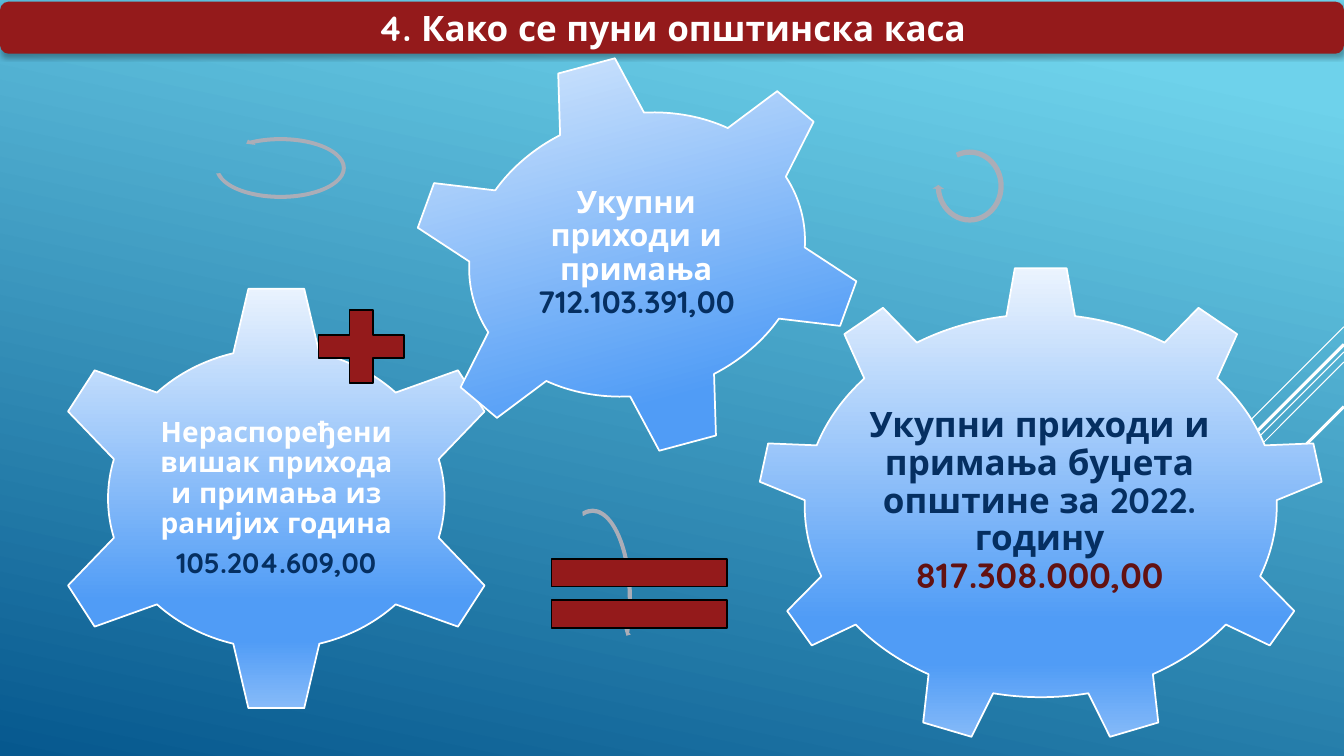
import pptx
import pptx.dml.color
import pptx.enum.shapes
import pptx.enum.text
import pptx.oxml
import pptx.oxml.ns
import pptx.util
import copy

KIND = pptx.enum.shapes.MSO_SHAPE
CELL = pptx.util.Inches(1 / 12)
COLS, ROWS = 160, 90  # square cells across the slide
WHITE, NAVY, RED, GREY = "FFFFFF", "052F61", "941A1B", "ABADB7"
SKY = [(10, "6ED2EB"), (100, "06588E")]
STEEL = [(0, "ECF4FE"), (74, "509CF6"), (83, "509CF6"), (100, "8BBDF9")]


def rgb(code):
    return pptx.dml.color.RGBColor.from_string(code)


def cells(*sizes):
    return [round(size * CELL) for size in sizes]


class Board:
    font = "Quicksand"

    def __init__(self, deck):
        self.slide = deck.slides.add_slide(deck.slide_layouts[6])
        self.shapes = self.slide.shapes

    def blend(self, fill, root, stops, angle):
        """Gradient whose angle runs clockwise."""
        fill.gradient()
        fill.gradient_angle = 360 - angle
        group = root.find(".//" + pptx.oxml.ns.qn("a:gsLst"))
        while len(group) < len(stops):
            group.append(copy.deepcopy(group[0]))
        for stop, (place, code) in zip(fill.gradient_stops, stops):
            stop.position = place / 100
            stop.color.rgb = rgb(code)

    def back(self, stops, angle):
        self.blend(self.slide.background.fill, self.slide.element, stops, angle)

    def ray(self, top, run):
        line = self.shapes.add_connector(
            pptx.enum.shapes.MSO_CONNECTOR.STRAIGHT,
            *cells(COLS, top, COLS - run, top + run))
        line.line.color.rgb = rgb(WHITE)
        line.element.spPr.append(pptx.oxml.parse_xml(
            "<a:effectLst %s/>" % pptx.oxml.ns.nsdecls("a")))
        return line.line

    def shape(self, kind, box, fill=None, edge=None, adj=()):
        item = self.shapes.add_shape(kind, *cells(*box))
        for i, value in enumerate(adj):
            item.adjustments[i] = value
        if fill:
            item.fill.solid()
            item.fill.fore_color.rgb = rgb(fill)
        if edge:
            item.line.color.rgb = rgb(edge)
            item.line.width = pptx.util.Pt(1.25)
        else:
            item.line.fill.background()
        item.shadow.inherit = False
        return item

    def words(self, frame, size, paras):
        """Each paragraph is a list of (text, colour) runs."""
        frame.word_wrap = True
        frame.vertical_anchor = pptx.enum.text.MSO_ANCHOR.MIDDLE
        for i, runs in enumerate(paras):
            para = frame.add_paragraph() if i else frame.paragraphs[0]
            para.alignment = pptx.enum.text.PP_ALIGN.CENTER
            for text, code in runs:
                run = para.add_run()
                run.text = text
                run.font.name = self.font
                run.font.size = pptx.util.Pt(size)
                run.font.bold = True
                run.font.color.rgb = rgb(code)

    def title(self, text, box):
        bar = self.shape(KIND.ROUNDED_RECTANGLE, box, RED)
        bar.element.spPr.find(pptx.oxml.ns.qn("a:effectLst")).append(
            pptx.oxml.parse_xml(
                '<a:outerShdw %s blurRad="44450" dist="27940" dir="5400000">'
                '<a:srgbClr val="000000"><a:alpha val="32000"/></a:srgbClr>'
                "</a:outerShdw>" % pptx.oxml.ns.nsdecls("a")))
        self.words(bar.text_frame, 25, [[(text, WHITE)]])

    def gear(self, kind, box, label, size, paras, turn=0):
        wheel = self.shape(kind, box, edge=WHITE)
        wheel.rotation = turn
        self.blend(wheel.fill, wheel.element, STEEL, 90)
        frame = self.shapes.add_textbox(*cells(*label)).text_frame
        frame.margin_left = frame.margin_right = pptx.util.Inches(0.03)
        frame.margin_top = frame.margin_bottom = pptx.util.Inches(0.03)
        self.words(frame, size, paras)
        for para in frame.paragraphs:
            para.line_spacing = 0.9
            para.space_after = pptx.util.Pt(0.35 * size)


def main():
    deck = pptx.Presentation()
    deck.slide_width, deck.slide_height = cells(COLS, ROWS)
    board = Board(deck)

    # Background with diagonal rays
    board.back(SKY, 102)
    for top, run, width in [(38.9, 12, 0.75), (41.9, 39.1, 0.75),
                            (43.1, 24.9, 0.75), (41, 22.9, 2.25),
                            (48.4, 16.7, 2.25)]:
        board.ray(top, run).width = pptx.util.Pt(width)

    # Title bar
    board.title("4. Како се пуни општинска каса", (0, 0.2, COLS, 6.2))

    # Gears: total, surplus, revenue
    board.gear(KIND.GEAR_9, (90.1, 31.7, 67.6, 57),
               (102.8, 45.1, 41.9, 29.3), 25,
               [[("Укупни приходи и примања буџета општине за 2022. годину ",
                  NAVY), ("817.308.000,00", "631212")]])
    board.gear(KIND.GEAR_6, (5.2, 33.8, 55.4, 51.1),
               (18.7, 46.8, 28.4, 25.2), 20,
               [[("Нераспоређени вишак прихода и примања из ранијих година",
                  WHITE)], [("105.204.609,00", NAVY)]])
    board.gear(KIND.GEAR_6, (48.5, 6.5, 54.7, 47.6),
               (60.8, 16.4, 29.9, 27.6), 22,
               [[("Укупни приходи и примања ", WHITE),
                 ("712.103.391,00", NAVY)]], turn=345)

    # Turning arrows
    for kind, box, adj in [
            (KIND.CIRCULAR_ARROW, (65.5, 60.2, 10.1, 22.2),
             (0.05, 2.99, 25.46, 157.98, 0.06)),
            (KIND.CIRCULAR_ARROW, (111, 17.4, 8.9, 9.5),
             (0.07, 4.3, 104.89, 148.38, 0.08)),
            (KIND.LEFT_CIRCULAR_ARROW, (25.3, 16, 16.2, 8),
             (0.06, 3.94, 133.14, 105.08, 0.07))]:
        board.shape(kind, box, GREY, adj=adj)

    # Plus and equals signs
    board.shape(KIND.MATH_PLUS, (36.1, 35.3, 13.8, 11.9), RED, "000000")
    board.shape(KIND.MATH_EQUAL, (61.9, 63.7, 28.4, 13.9), RED, "000000")

    deck.save("out.pptx")


if __name__ == "__main__":
    main()
